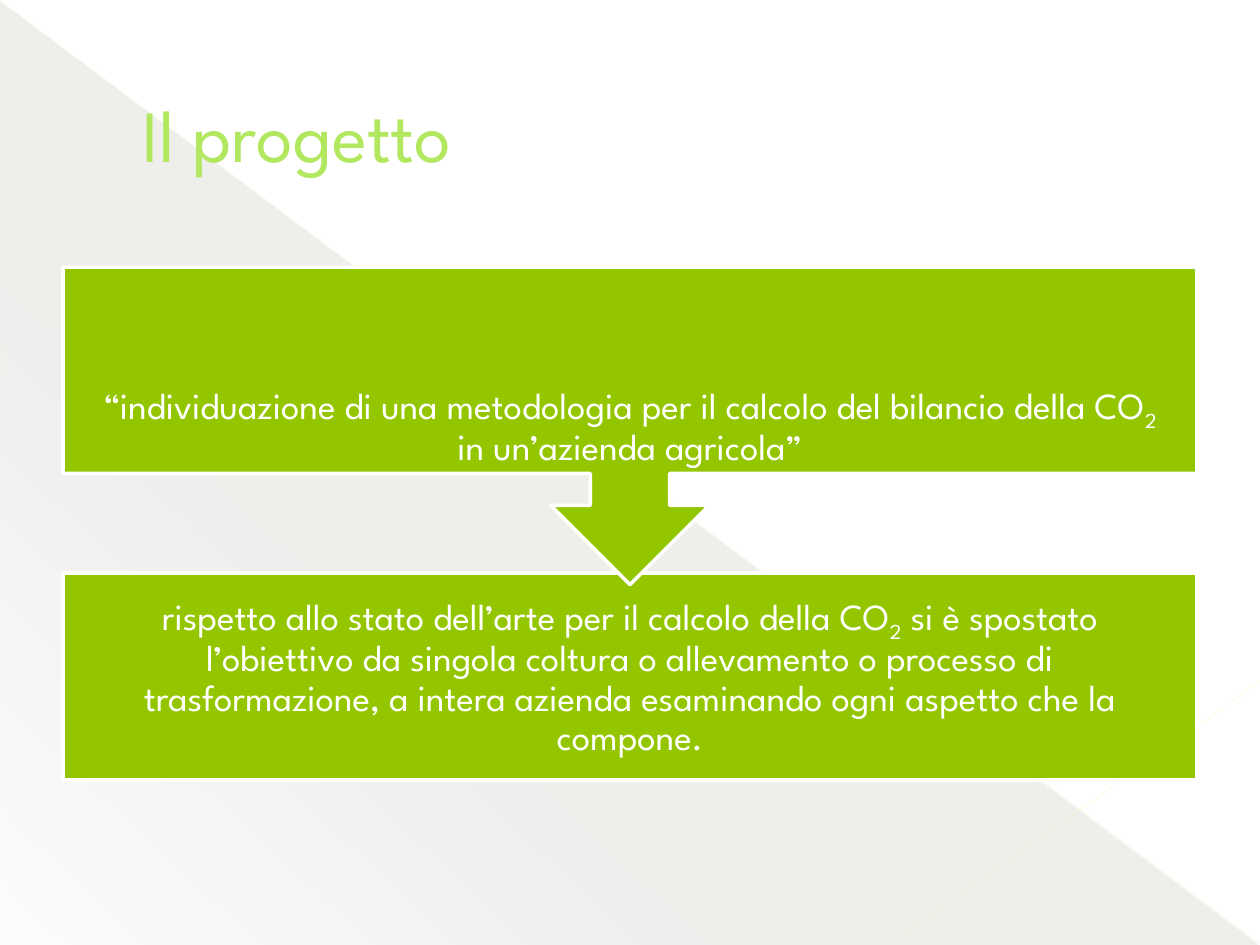
from lxml import etree
from pptx import Presentation
from pptx.dml.color import RGBColor
from pptx.enum.shapes import MSO_CONNECTOR, MSO_SHAPE
from pptx.enum.text import MSO_ANCHOR, PP_ALIGN
from pptx.oxml.ns import qn
from pptx.util import Pt

RECTANGLE = MSO_SHAPE.RECTANGLE
CALLOUT = MSO_SHAPE.UP_ARROW_CALLOUT
TRIANGLE = MSO_SHAPE.RIGHT_TRIANGLE
STRAIGHT = MSO_CONNECTOR.STRAIGHT
MIDDLE = MSO_ANCHOR.MIDDLE
LEFT, CENTER = PP_ALIGN.LEFT, PP_ALIGN.CENTER

FONT = "League Spartan"
COLORS = {
    "title": "B1E85F",
    "box": "94C600",
    "white": "FFFFFF",
    "shade": "3E3D2D",
    "diagonal": "E5FFBD",
    "corner": "E8FFC4",
}
SHADE_STOPS = [(0, 10), (70, 8), (100, 1)]  # position and opacity, percent
SHADE_ANGLE = 133

TITLE_AREA = (36, 20.88, 648, 110.16)
GOAL_AREA = (36, 152.64, 648, 181.44)
SCOPE_AREA = (36, 327.6, 648, 118.08)
GOAL_RUNS = [
    ("“individuazione di una metodologia per il calcolo del bilancio della CO", False),
    ("2", True),
    (" in un’azienda agricola”", False),
]
SCOPE_RUNS = [
    ("rispetto allo stato dell’arte per il calcolo della CO", False),
    ("2", True),
    (" si è spostato l’obiettivo da singola coltura o allevamento o processo di "
     "trasformazione, a intera azienda esaminando ogni aspetto che la compone.", False),
]
TITLE_STYLE = {"size": 42, "color": "title", "alignment": LEFT, "line_spacing": 1.0}
BOX_STYLE = {"size": 21, "color": "white", "alignment": CENTER, "line_spacing": 0.9}
TITLE_MARGINS = {"margin_left": 45.36, "margin_right": 7.2,
                 "margin_top": 3.6, "margin_bottom": 3.6}
BOX_MARGINS = {"margin_left": 19, "margin_right": 19,
               "margin_top": 11.52, "margin_bottom": 11.52}


def rgb(name):
    return RGBColor.from_string(COLORS[name])


def points(values):
    return [Pt(value) for value in values]


def set_alpha(color_element, percent):
    etree.SubElement(color_element, qn("a:alpha"), val=str(percent * 1000))


def add_shaded_triangle(slide):
    triangle = slide.shapes.add_shape(TRIANGLE, *points((0.3, 0.8, 719.4, 539.2)))
    triangle.shadow.inherit = False
    triangle.line.fill.background()
    triangle.fill.gradient()
    triangle.fill.gradient_angle = 360 - SHADE_ANGLE
    stops = triangle._element.spPr.find(".//" + qn("a:gsLst"))
    stops.clear()
    for position, opacity in SHADE_STOPS:
        stop = etree.SubElement(stops, qn("a:gs"), pos=str(position * 1000))
        set_alpha(etree.SubElement(stop, qn("a:srgbClr"), val=COLORS["shade"]), opacity)


def add_faint_line(slide, ends, color, width, opacity):
    connector = slide.shapes.add_connector(STRAIGHT, *points(ends))
    connector.line.width = Pt(width)
    connector.line.color.rgb = rgb(color)
    properties = connector._element.spPr
    set_alpha(properties.find(".//" + qn("a:srgbClr")), opacity)
    etree.SubElement(properties, qn("a:effectLst"))


def add_box(slide, kind, area, rotation=0):
    shape = slide.shapes.add_shape(kind, *points(area))
    shape.rotation = rotation
    shape.shadow.inherit = False
    shape.fill.solid()
    shape.fill.fore_color.rgb = rgb("box")
    shape.line.color.rgb = rgb("white")
    shape.line.width = Pt(2)


def add_text(slide, area, runs, style, margins):
    """Add one paragraph of (text, is_subscript) runs, centred vertically."""
    frame = slide.shapes.add_textbox(*points(area)).text_frame
    frame.word_wrap = True
    frame.vertical_anchor = MIDDLE
    for name, value in margins.items():
        setattr(frame, name, Pt(value))
    paragraph = frame.paragraphs[0]
    for name in ("alignment", "line_spacing"):
        setattr(paragraph, name, style[name])
    for text, is_subscript in runs:
        run = paragraph.add_run()
        run.text = text
        run.font.name = FONT
        run.font.size = Pt(style["size"])
        run.font.color.rgb = rgb(style["color"])
        if is_subscript:
            run.font._element.set("baseline", "-25000")


def main():
    presentation = Presentation()
    presentation.slide_width, presentation.slide_height = Pt(720), Pt(540)
    slide = presentation.slides.add_slide(presentation.slide_layouts[6])

    add_shaded_triangle(slide)
    add_faint_line(slide, (0, 0.72, 719.28, 539.28), "diagonal", 0.39, 35)
    add_faint_line(slide, (720, 389.52, 509.04, 539.28), "corner", 0.47, 45)

    add_text(slide, TITLE_AREA, [("Il progetto", False)], TITLE_STYLE, TITLE_MARGINS)
    add_box(slide, RECTANGLE, SCOPE_AREA)
    add_text(slide, SCOPE_AREA, SCOPE_RUNS, BOX_STYLE, BOX_MARGINS)
    add_box(slide, CALLOUT, GOAL_AREA, rotation=180)
    add_text(slide, GOAL_AREA, GOAL_RUNS, BOX_STYLE, BOX_MARGINS)

    presentation.save("out.pptx")


if __name__ == "__main__":
    main()
